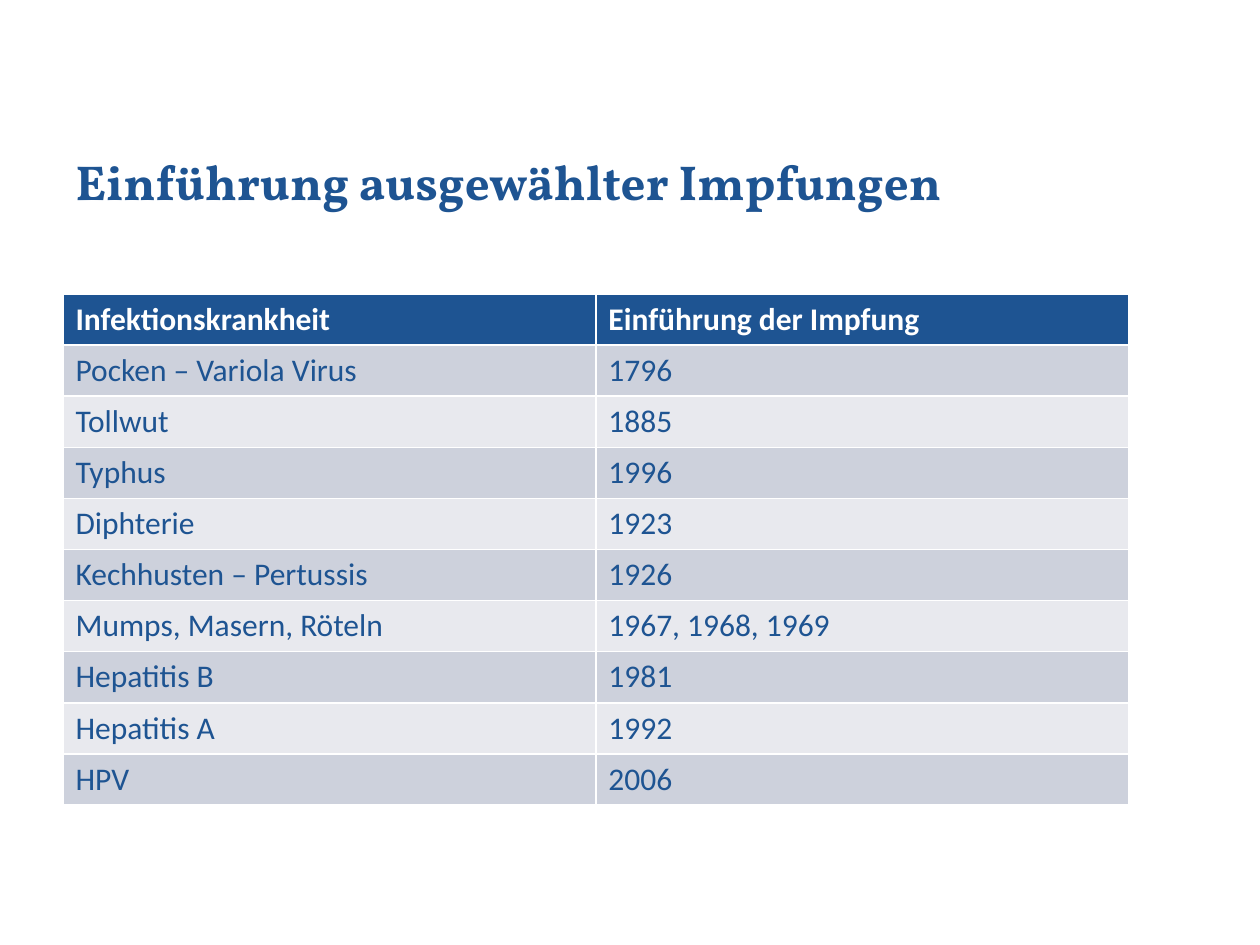
"""Build a slide with a table of when selected vaccinations were introduced."""
from dataclasses import dataclass

from pptx import Presentation
from pptx.dml.color import RGBColor
from pptx.enum.text import MSO_ANCHOR, PP_ALIGN
from pptx.slide import Slide
from pptx.text.text import TextFrame
from pptx.util import Pt

TOP = MSO_ANCHOR.TOP
LEFT = PP_ALIGN.LEFT
TITLE_ONLY = 5
COLORS = {
    "blue": "1E5492",
    "white": "FFFFFF",
    "band_dark": "CDD1DC",
    "band_light": "E8E9EE",
}
COLUMN_WIDTH = 304.5
ROW_HEIGHT = 29.2


@dataclass(frozen=True)
class Vaccination:
    disease: str
    introduced: str


HEADER = Vaccination("Infektionskrankheit", "Einführung der Impfung")
VACCINATIONS = [
    Vaccination("Pocken – Variola Virus", "1796"),
    Vaccination("Tollwut", "1885"),
    Vaccination("Typhus", "1996"),
    Vaccination("Diphterie", "1923"),
    Vaccination("Kechhusten – Pertussis", "1926"),
    Vaccination("Mumps, Masern, Röteln", "1967, 1968, 1969"),
    Vaccination("Hepatitis B", "1981"),
    Vaccination("Hepatitis A", "1992"),
    Vaccination("HPV", "2006"),
]


def rgb(name: str) -> RGBColor:
    return RGBColor.from_string(COLORS[name])


def write(tf: TextFrame, text: str, *, size: float = 18, font: str = "Calibri",
          color: str = "blue", bold: bool = False) -> None:
    p = tf.paragraphs[0]
    p.alignment = LEFT
    r = p.add_run()
    r.text = text
    r.font.size = Pt(size)
    r.font.name = font
    r.font.bold = bold
    r.font.color.rgb = rgb(color)


def add_title(s: Slide, text: str) -> None:
    title = s.shapes.title
    title.left, title.top, title.width, title.height = Pt(36), Pt(83), Pt(648), Pt(68)
    tf = title.text_frame
    tf.vertical_anchor = TOP
    write(tf, text, size=28, font="Vollkorn", bold=True)


def add_vaccination_table(s: Slide, header: Vaccination, entries: list[Vaccination]) -> None:
    rows = [header, *entries]
    table = s.shapes.add_table(len(rows), 2, Pt(36), Pt(168), Pt(2 * COLUMN_WIDTH),
                               Pt(len(rows) * ROW_HEIGHT)).table
    for column in table.columns:
        column.width = Pt(COLUMN_WIDTH)
    for i, (row, entry) in enumerate(zip(table.rows, rows)):
        row.height = Pt(ROW_HEIGHT)
        is_header = i == 0
        band = "band_dark" if i % 2 else "band_light"
        for cell, text in zip(row.cells, (entry.disease, entry.introduced)):
            cell.fill.solid()
            cell.fill.fore_color.rgb = rgb("blue" if is_header else band)
            write(cell.text_frame, text, color="white" if is_header else "blue", bold=is_header)


def main() -> None:
    prs = Presentation()
    prs.slide_width, prs.slide_height = Pt(720), Pt(540)
    s = prs.slides.add_slide(prs.slide_layouts[TITLE_ONLY])
    add_title(s, "Einführung ausgewählter Impfungen")
    add_vaccination_table(s, HEADER, VACCINATIONS)
    prs.save("out.pptx")


if __name__ == "__main__":
    main()
